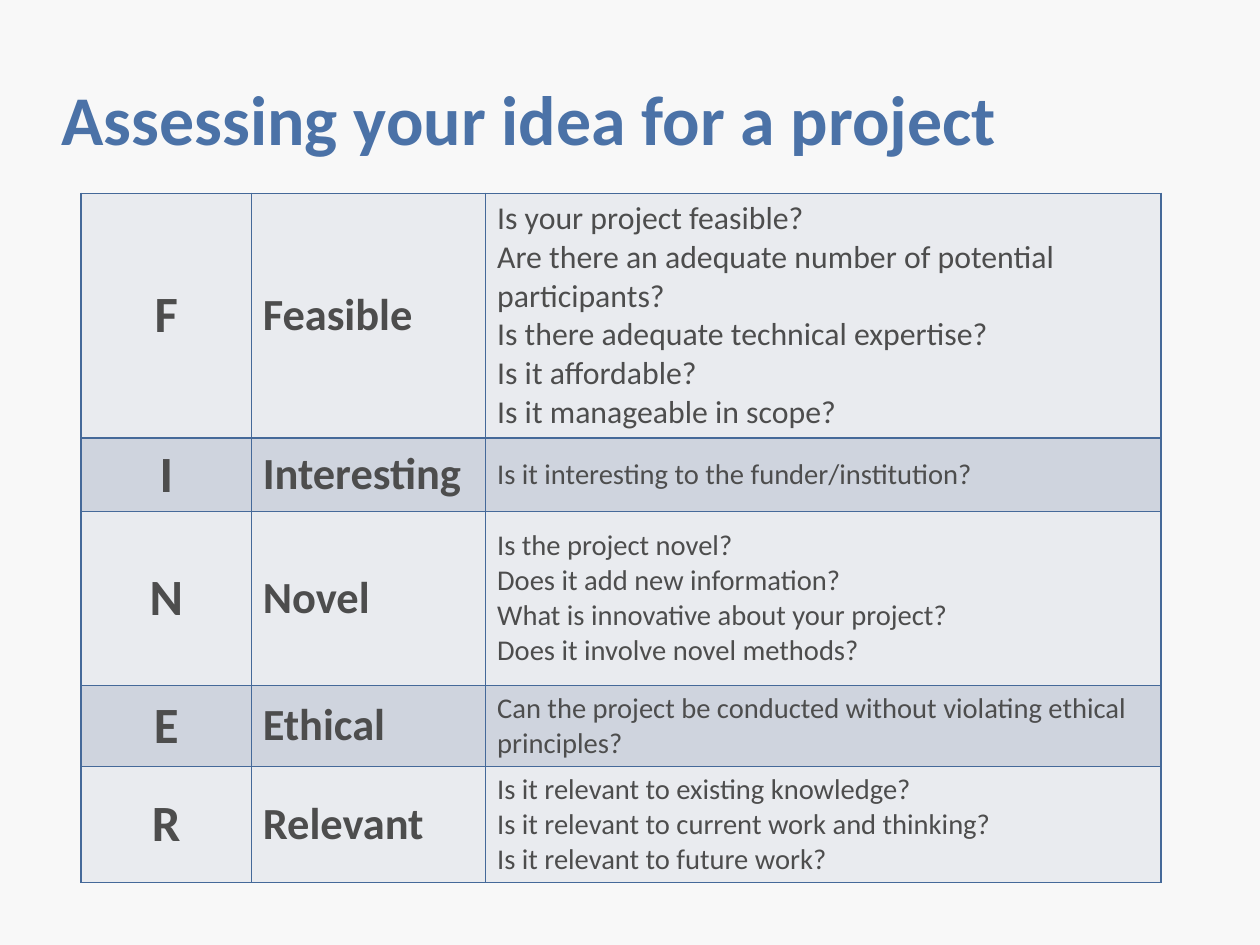
from dataclasses import dataclass

from lxml.etree import SubElement
from pptx import Presentation
from pptx.dml.color import RGBColor
from pptx.enum.text import MSO_ANCHOR, MSO_AUTO_SIZE, PP_ALIGN
from pptx.oxml.ns import qn
from pptx.slide import Slide
from pptx.table import _Cell
from pptx.text.text import TextFrame
from pptx.util import Pt

BACKGROUND = RGBColor(0xF8, 0xF8, 0xF8)
TITLE_BLUE = RGBColor(0x4B, 0x72, 0xA7)
TEXT_GREY = RGBColor(0x4D, 0x4D, 0x4D)
BORDER_BLUE = RGBColor(0x45, 0x69, 0x99)
BANDS = (RGBColor(0xE9, 0xEB, 0xEF), RGBColor(0xCF, 0xD4, 0xDE))

COLUMN_WIDTHS = (107.3, 147.6, 425.5)
TITLE_FRAME = {
    "margin_left": 0, "margin_top": 0, "margin_right": 0, "margin_bottom": 0,
    "vertical_anchor": MSO_ANCHOR.MIDDLE,
    "auto_size": MSO_AUTO_SIZE.NONE,
    "word_wrap": True,
}


@dataclass(frozen=True)
class Criterion:
    word: str
    height: float
    questions: tuple[str, ...]
    size: int = 18


CRITERIA = (
    Criterion("Feasible", 151.2, (
        "Is your project feasible?",
        "Are there an adequate number of potential participants? \v"
        "Is there adequate technical expertise?",
        "Is it affordable?",
        "Is it manageable in scope?",
    ), 20),
    Criterion("Interesting", 45.4, ("Is it interesting to the funder/institution?",)),
    Criterion("Novel", 109.4, (
        "Is the project novel?",
        "Does it add new information?",
        "What is innovative about your project?",
        "Does it involve novel methods?",
    )),
    Criterion("Ethical", 50.4, (
        "Can the project be conducted without violating ethical principles?",
    )),
    Criterion("Relevant", 72, (
        "Is it relevant to existing knowledge?",
        "Is it relevant to current work and thinking?",
        "Is it relevant to future work?",
    )),
)


def write(tf: TextFrame, lines: tuple[str, ...], size: float, bold: bool,
          color: RGBColor, align: PP_ALIGN = PP_ALIGN.LEFT) -> None:
    tf.text = "\n".join(lines)
    for p in tf.paragraphs:
        p.alignment = align
        for r in p.runs:
            for name, value in {"name": "Calibri", "size": Pt(size), "bold": bold}.items():
                setattr(r.font, name, value)
            r.font.color.rgb = color


def style_cell(cell: _Cell, fill: RGBColor) -> None:
    tc_pr = cell._tc.get_or_add_tcPr()
    for side in ("lnL", "lnR", "lnT", "lnB"):
        line = SubElement(tc_pr, qn(f"a:{side}"), w=str(Pt(1)))
        solid = SubElement(line, qn("a:solidFill"))
        SubElement(solid, qn("a:srgbClr"), val=str(BORDER_BLUE))
    cell.fill.solid()
    cell.fill.fore_color.rgb = fill
    cell.vertical_anchor = MSO_ANCHOR.MIDDLE


def add_title(s: Slide, text: str) -> None:
    sp = s.shapes.title
    sp.left, sp.top, sp.width, sp.height = Pt(38.9), Pt(24.5), Pt(714.2), Pt(99.4)
    tf = sp.text_frame
    for name, value in TITLE_FRAME.items():
        setattr(tf, name, value)
    write(tf, (text,), 44, True, TITLE_BLUE)


def add_criteria(s: Slide, criteria: tuple[Criterion, ...]) -> None:
    height = sum(c.height for c in criteria)
    table = s.shapes.add_table(len(criteria), len(COLUMN_WIDTHS), Pt(51.1), Pt(121.7),
                               Pt(sum(COLUMN_WIDTHS)), Pt(height)).table
    table.first_row = table.horz_banding = False
    for column, width in zip(table.columns, COLUMN_WIDTHS):
        column.width = Pt(width)
    for i, (row, c) in enumerate(zip(table.rows, criteria)):
        row.height = Pt(c.height)
        for cell in row.cells:
            style_cell(cell, BANDS[i % 2])
        letter, word, questions = (cell.text_frame for cell in row.cells)
        write(letter, (c.word[0],), 32, True, TEXT_GREY, PP_ALIGN.CENTER)
        write(word, (c.word,), 28, True, TEXT_GREY)
        write(questions, c.questions, c.size, False, TEXT_GREY)


def main() -> None:
    prs = Presentation()
    prs.slide_width, prs.slide_height = Pt(793.75), Pt(595.25)
    s = prs.slides.add_slide(prs.slide_layouts[5])
    s.background.fill.solid()
    s.background.fill.fore_color.rgb = BACKGROUND
    add_title(s, "Assessing your idea for a project")
    add_criteria(s, CRITERIA)
    prs.save("out.pptx")


if __name__ == "__main__":
    main()
